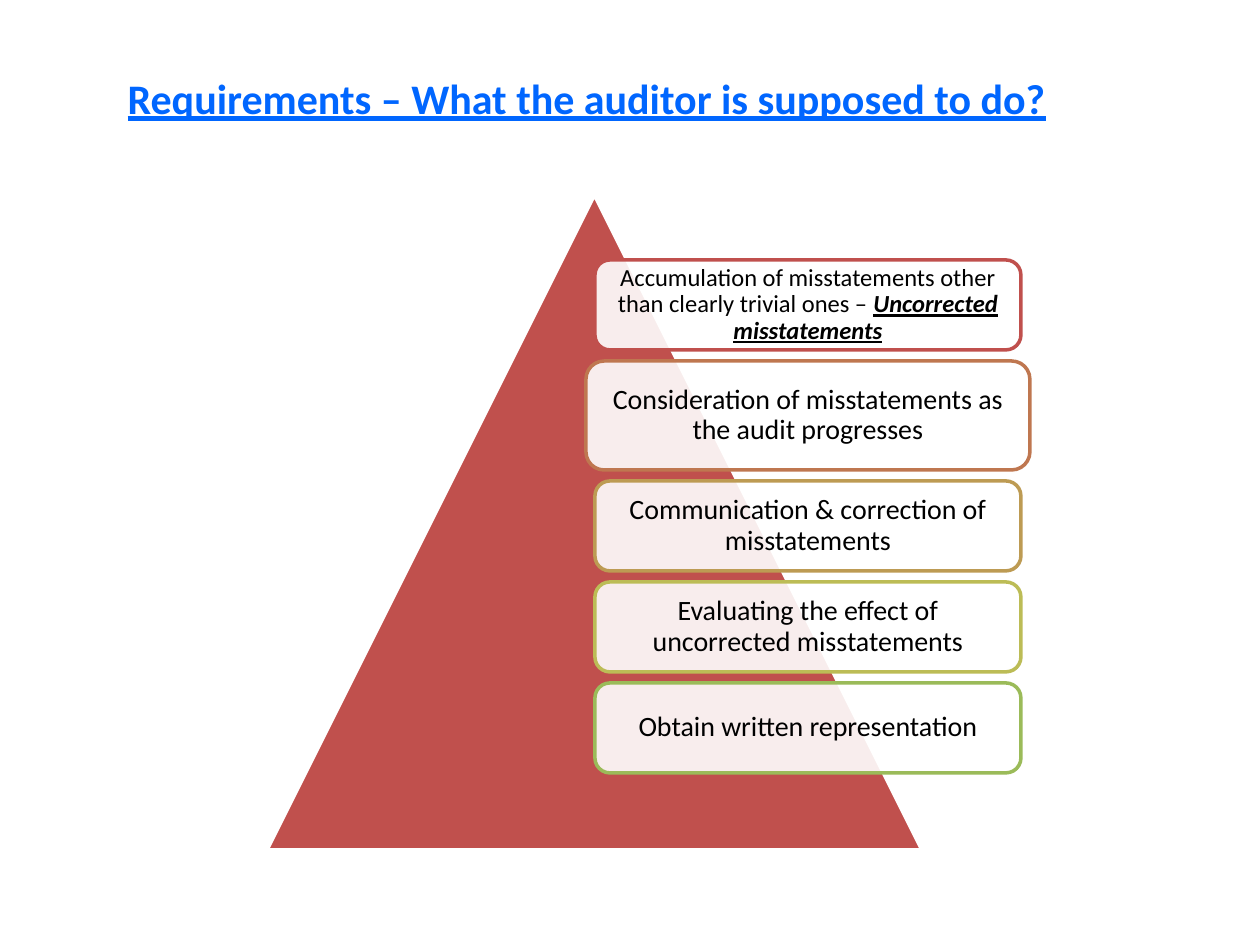
from lxml import etree
from pptx import Presentation
from pptx import util as u
from pptx.dml.color import RGBColor
from pptx.enum import shapes, text
from pptx.oxml.ns import qn

PX = 914400 / 126  # EMU per px
COLORS = {
    "title": "0066FF", "text": "000000", "white": "FFFFFF",
    "red": "C0504D", "rust": "BF7750", "ochre": "BD9B53",
    "olive": "BCBC56", "green": "9BBB59",
}


def px(*lengths):
    return [u.Emu(round(n * PX)) for n in lengths]


def rgb(name):
    return RGBColor.from_string(COLORS[name])


def add_text(paragraph, words, size=16, color="text", bold=False, italic=False, underline=False):
    run = paragraph.add_run()
    run.text = words
    font = run.font
    font.name, font.size, font.color.rgb = "Calibri", u.Pt(size), rgb(color)
    font.bold, font.italic, font.underline = bold, italic, underline


class Deck:
    line_width = u.Pt(2)

    def __init__(self, width, height):
        self.prs = Presentation()
        self.prs.slide_width, self.prs.slide_height = px(width, height)
        self.slide = self.prs.slides.add_slide(self.prs.slide_layouts[5])

    def title(self, box, words):
        title = self.slide.shapes.title
        title.left, title.top, title.width, title.height = px(*box)
        frame = title.text_frame
        frame.word_wrap = False
        frame.auto_size = text.MSO_AUTO_SIZE.SHAPE_TO_FIT_TEXT
        frame.vertical_anchor = text.MSO_ANCHOR.TOP
        frame.paragraphs[0].alignment = text.PP_ALIGN.LEFT
        add_text(frame.paragraphs[0], words, size=24, color="title", bold=True, underline=True)

    def shape(self, kind, box, fill, line, opacity=100):
        shape = self.slide.shapes.add_shape(kind, *px(*box))
        shape.shadow.inherit = False
        shape.fill.solid()
        shape.fill.fore_color.rgb = rgb(fill)
        shape.line.color.rgb = rgb(line)
        shape.line.width = self.line_width
        if opacity < 100:
            color = shape.fill._xPr.find(qn("a:solidFill"))[0]
            etree.SubElement(color, qn("a:alpha"), val=str(opacity * 1000))
        return shape

    def step(self, box, line, runs, inset):
        card = self.shape(shapes.MSO_SHAPE.ROUNDED_RECTANGLE, box, "white", line, opacity=90)
        frame = card.text_frame
        frame.word_wrap = True
        frame.vertical_anchor = text.MSO_ANCHOR.MIDDLE
        (frame.margin_left, frame.margin_top,
         frame.margin_right, frame.margin_bottom) = px(*[inset] * 4)
        paragraph = frame.paragraphs[0]
        paragraph.alignment = text.PP_ALIGN.CENTER
        paragraph.line_spacing = 0.9
        for words, style in runs:
            add_text(paragraph, words, **style)


def main():
    deck = Deck(1260, 945)
    deck.title((115, 66, 953, 63), "Requirements – What the auditor is supposed to do?")

    # Pyramid behind the steps
    deck.shape(shapes.MSO_SHAPE.ISOSCELES_TRIANGLE, (267, 195, 655, 655), "red", "white")

    # Steps: stacked on one centre line; the second is larger
    emphasis = dict(size=14, bold=True, italic=True, underline=True)
    steps = [
        ("red", 426, 90, 8, [
            ("Accumulation of misstatements other than clearly trivial ones – ", dict(size=14)),
            ("Uncorrected misstatements", emphasis)]),
        ("rust", 444, 109, 9, [("Consideration of misstatements as the audit progresses", {})]),
        ("ochre", 426, 90, 9, [("Communication & correction of misstatements", {})]),
        ("olive", 426, 90, 9, [("Evaluating the effect of uncorrected misstatements", {})]),
        ("green", 426, 90, 9, [("Obtain written representation", {})]),
    ]
    center, top, gap = 808, 260, 11
    for line, width, height, inset, runs in steps:
        deck.step((center - width // 2, top, width, height), line, runs, inset)
        top += height + gap

    deck.prs.save("out.pptx")


if __name__ == "__main__":
    main()
